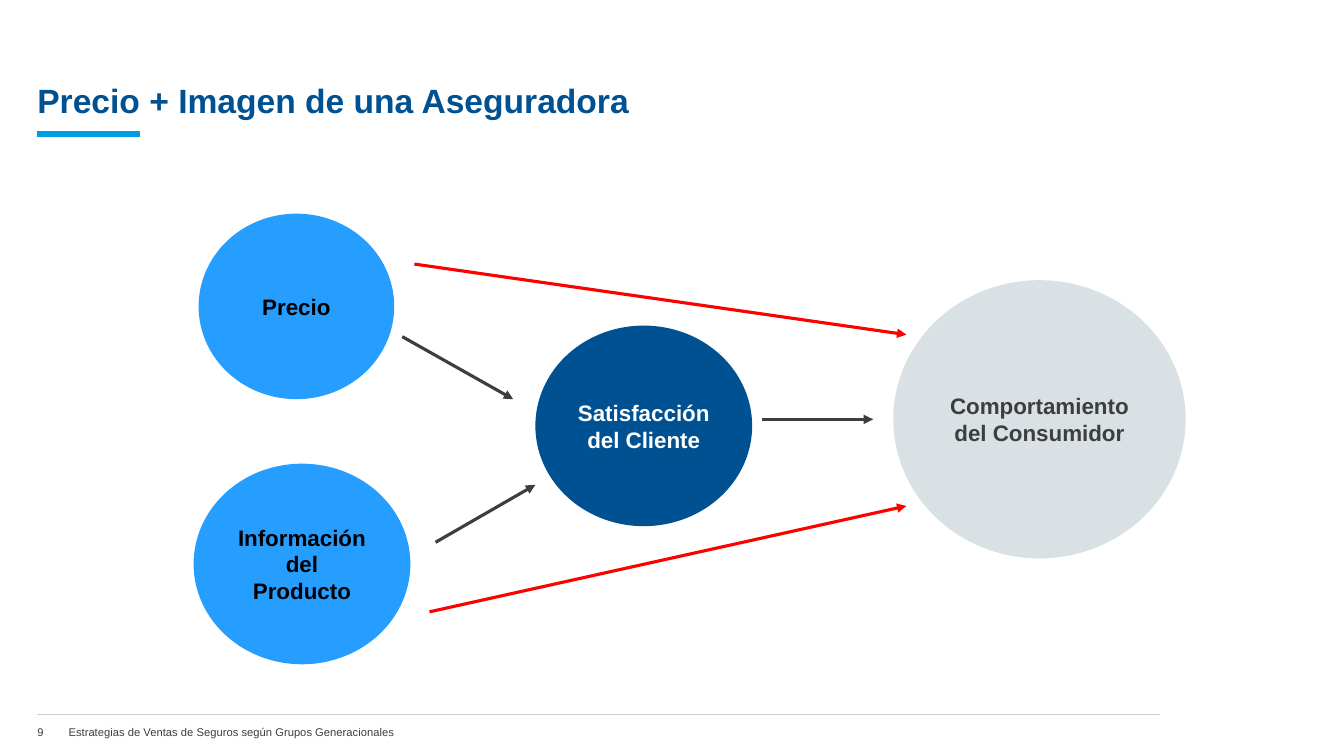
from lxml.etree import SubElement
from pptx import Presentation
from pptx.dml.color import RGBColor
from pptx.enum.shapes import MSO_CONNECTOR, MSO_SHAPE
from pptx.enum.text import MSO_ANCHOR, PP_ALIGN
from pptx.oxml.ns import qn
from pptx.util import Inches, Pt

COLORS = {
    "navy": "005192", "sky": "259EFF", "cyan": "009EE0", "mist": "D9E1E5",
    "rule": "C6D2D9", "gray": "3E3E3E", "red": "FF0000",
    "black": "000000", "white": "FFFFFF",
}


def write_text(shape, text, size, color, bold=False, align=PP_ALIGN.LEFT,
               anchor=MSO_ANCHOR.MIDDLE, insets=(0, 0, 0, 0)):
    frame = shape.text_frame
    frame.word_wrap = True
    frame.vertical_anchor = anchor
    (frame.margin_left, frame.margin_top,
     frame.margin_right, frame.margin_bottom) = map(Inches, insets)
    paragraph = frame.paragraphs[0]
    paragraph.text = text
    paragraph.alignment = align
    paragraph.line_spacing = 1
    paragraph.space_before = Pt(0)
    paragraph.font.name = "Arial"
    paragraph.font.size = Pt(size)
    paragraph.font.bold = bold
    paragraph.font.color.rgb = RGBColor.from_string(COLORS[color])


def draw_line(slide, start, end, color, width, arrow=False):
    connector = slide.shapes.add_connector(
        MSO_CONNECTOR.STRAIGHT, *map(Inches, start + end))
    connector.line.color.rgb = RGBColor.from_string(COLORS[color])
    connector.line.width = Pt(width)
    if arrow:
        SubElement(connector.line._get_or_add_ln(), qn("a:tailEnd"), type="triangle")
    SubElement(connector._element.spPr, qn("a:effectLst"))


presentation = Presentation()
presentation.slide_width = Inches(13.33)
presentation.slide_height = Inches(7.5)
slide = presentation.slides.add_slide(presentation.slide_layouts[5])

# Title with accent bar
title = slide.shapes.title
title.left, title.top, title.width, title.height = map(
    Inches, (0.37, 0.36, 12.59, 0.87))
write_text(title, "Precio + Imagen de una Aseguradora", size=24, color="navy",
           bold=True, anchor=MSO_ANCHOR.BOTTOM, insets=(0, 0, 0, 0.04))
draw_line(slide, (0.37, 1.33), (1.39, 1.33), "cyan", 4.5)

# Footer
draw_line(slide, (0.37, 7.09), (11.51, 7.09), "rule", 0.75)
footers = [
    ("9", 0.37, 0.31),
    ("Estrategias de Ventas de Seguros según Grupos Generacionales", 0.68, 10.78),
]
for text, left, width in footers:
    footer = slide.shapes.add_textbox(
        Inches(left), Inches(7.14), Inches(width), Inches(0.24))
    write_text(footer, text, size=8, color="gray")

# Factors, satisfaction and behaviour
circles = [
    ("Precio", (1.97, 2.12, 1.94, 1.84), "sky", "black"),
    ("Información del Producto", (1.92, 4.6, 2.15, 1.99), "sky", "black"),
    ("Satisfacción del Cliente", (5.31, 3.23, 2.15, 1.99), "navy", "white"),
    ("Comportamiento del Consumidor", (8.86, 2.78, 2.9, 2.76), "mist", "gray"),
]
for text, box, fill, color in circles:
    circle = slide.shapes.add_shape(MSO_SHAPE.OVAL, *map(Inches, box))
    circle.shadow.inherit = False
    circle.fill.solid()
    circle.fill.fore_color.rgb = RGBColor.from_string(COLORS[fill])
    circle.line.fill.background()
    write_text(circle, text, size=16, color=color, bold=True,
               align=PP_ALIGN.CENTER, insets=(0.1, 0.05, 0.1, 0.05))

# Arrows: gray through satisfaction, red straight to behaviour
arrows = [
    ((3.99, 3.34), (5.09, 3.96), "gray"),
    ((4.32, 5.38), (5.31, 4.81), "gray"),
    ((7.56, 4.16), (8.66, 4.16), "gray"),
    ((4.11, 2.62), (8.99, 3.32), "red"),
    ((4.26, 6.07), (8.99, 5.02), "red"),
]
for start, end, color in arrows:
    draw_line(slide, start, end, color, 2.25, arrow=True)

presentation.save("out.pptx")
